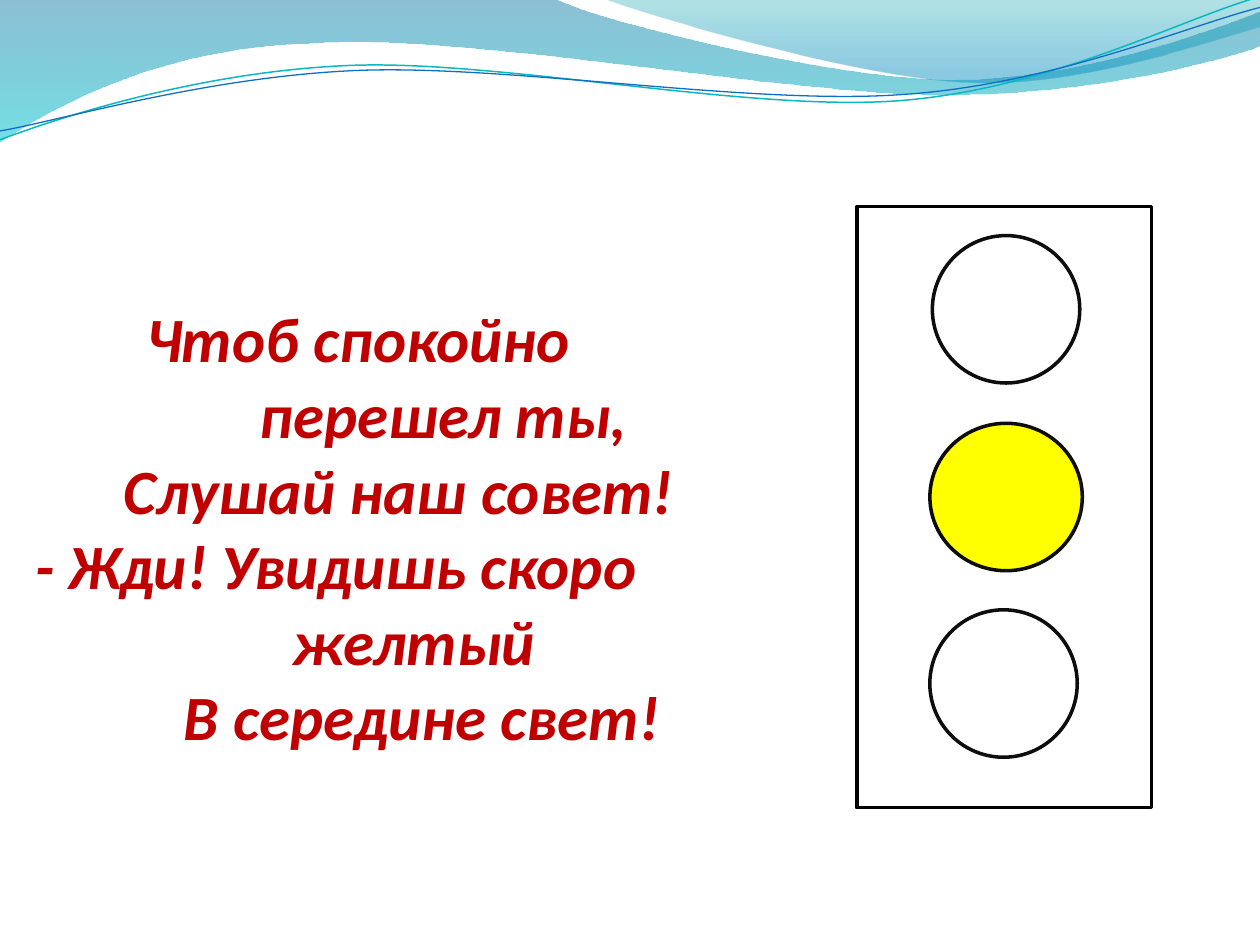
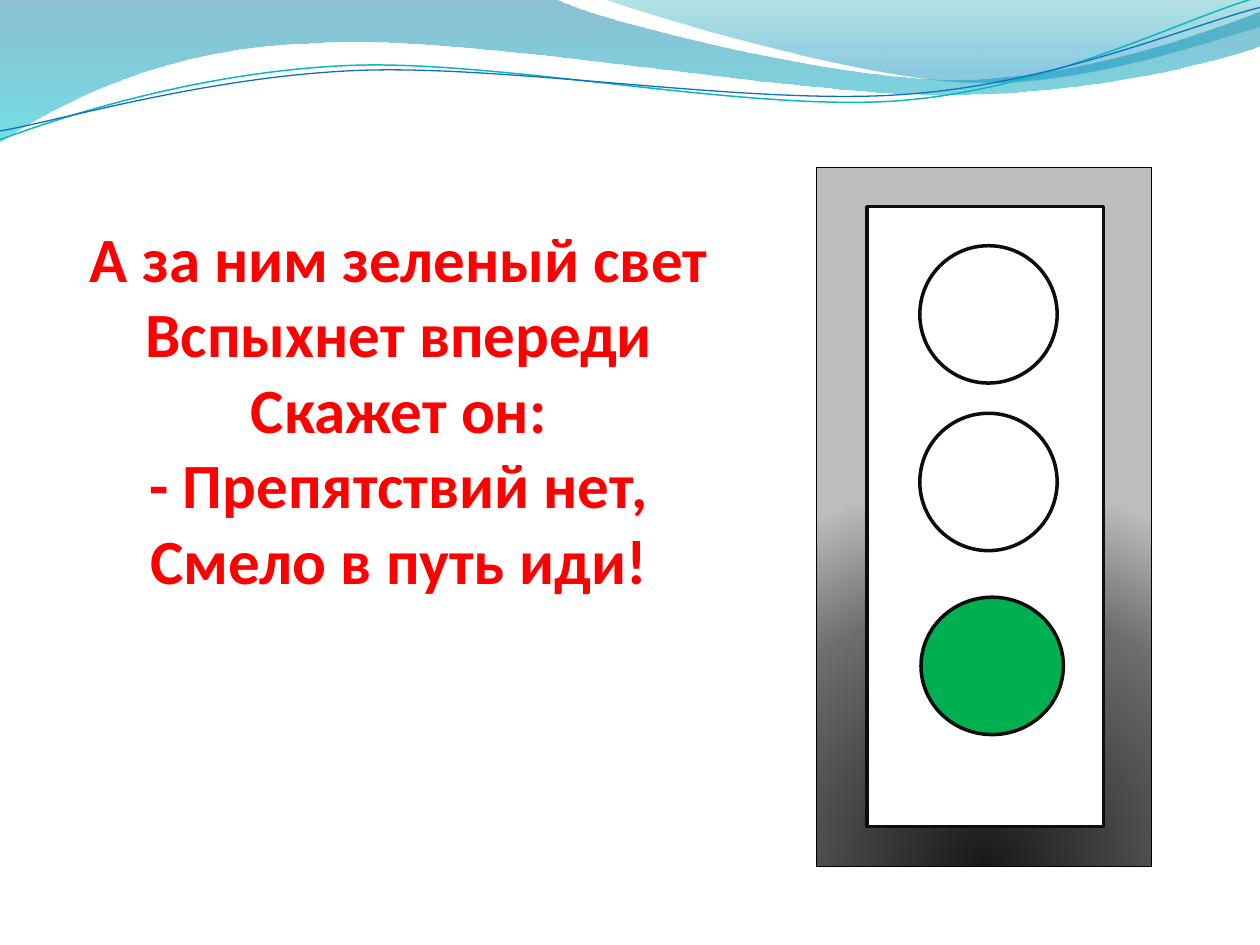
import math
from dataclasses import dataclass

from pptx import Presentation
from pptx.dml.color import RGBColor
from pptx.enum import shapes, text
from pptx.oxml import parse_xml
from pptx.oxml.ns import nsdecls, qn
from pptx.util import Inches, Pt


@dataclass(frozen=True)
class Theme:
    font: str = "Calibri"
    verse_size: float = 36
    crimson: str = "C00000"
    red: str = "FF0000"
    yellow: str = "FFFF00"
    green: str = "00B050"
    white: str = "FFFFFF"
    black: str = "000000"
    outline: str = "0D0D0D"
    outline_width: float = 2
    thin_width: float = 0.75
    wave_teal: str = "0AB8BF"
    wave_blue: str = "0F6FC6"
    broad_wave: tuple = ((0, "0074A1", 45), (100, "00C6CF", 55))
    corner_wave: tuple = ((0, "00A1A9", 30), (80, "008BBF", 45))
    metal: tuple = ((0, "191919", 100), (68, "6C6C6C", 100), (100, "BDBDBD", 100))


THEME = Theme()
DOWNWARD = '<a:lin ang="5400000" scaled="0"/>'
FROM_BELOW = ('<a:path path="circle">'
              '<a:fillToRect l="50000" t="130000" r="50000" b="-30000"/></a:path>')
CURVE_TILT = -2.7

BROAD_WAVE = [
    (0, 0), (4.4, -0.01), (4.76, 0.17, 6.64, 0.63, 7.58, 0.63),
    (8.53, 0.63, 9.58, 0.26, 10, 0.09), (10.01, 0.36),
    (9.83, 0.44, 8.7, 0.76, 7.46, 0.75), (6.22, 0.75, 3.82, 0.28, 2.57, 0.34),
    (1.29, 0.36, 0.46, 0.83, -0.01, 1.13), (0, 0)]
CORNER_WAVE = [
    (4.79, -0.01), (5.09, 0.11, 6.82, 0.62, 7.69, 0.65),
    (8.56, 0.69, 9.61, 0.32, 10, 0.21), (10, 0), (4.79, -0.01)]
TEAL_CURVE = [
    (0, 1.11), (0.48, 0.93, 1.58, 0.57, 2.77, 0.52),
    (3.95, 0.47, 5.93, 0.89, 7.13, 0.8), (8.33, 0.71, 9.38, 0.15, 9.98, -0.02)]
BLUE_CURVE = [
    (0, 1.04), (0.47, 0.96, 1.64, 0.61, 2.83, 0.56),
    (4.03, 0.51, 5.97, 0.84, 7.17, 0.75), (8.36, 0.67, 9.41, 0.21, 10, 0.06)]

WAIT_VERSE = [
    ("Чтоб спокойно", 1), ("перешел ты,", 1.9), ("Слушай наш совет!", 0.82),
    ("- Жди! Увидишь скоро", 0.12), ("желтый", 2.16), ("В середине свет!", 1.3)]
GO_VERSE = [
    ("А за ним зеленый свет\vВспыхнет впереди\vСкажет он:\v"
     "- Препятствий нет,\vСмело в путь иди!", 0)]


def rgb(color):
    return RGBColor.from_string(color)


def paint(sp, fill=None, line=None, width=THEME.outline_width):
    sp.shadow.inherit = False
    if fill:
        sp.fill.solid()
        sp.fill.fore_color.rgb = rgb(fill)
    else:
        sp.fill.background()
    if line:
        sp.line.color.rgb = rgb(line)
        sp.line.width = Pt(width)
    else:
        sp.line.fill.background()


def set_gradient(sp, stops, direction):
    gs = "".join(
        f'<a:gs pos="{pos * 1000}"><a:srgbClr val="{color}">'
        f'<a:alpha val="{alpha * 1000}"/></a:srgbClr></a:gs>'
        for pos, color, alpha in stops)
    sp.fill.background()
    spPr = sp.element.spPr
    spPr.replace(spPr.find(qn("a:noFill")), parse_xml(
        f'<a:gradFill {nsdecls("a")} rotWithShape="1">'
        f'<a:gsLst>{gs}</a:gsLst>{direction}</a:gradFill>'))


def rotate(points, degrees):
    xs, ys = zip(*points)
    cx, cy = (min(xs) + max(xs)) / 2, (min(ys) + max(ys)) / 2
    cos, sin = math.cos(math.radians(degrees)), math.sin(math.radians(degrees))
    return [(cx + (x - cx) * cos - (y - cy) * sin,
             cy + (x - cx) * sin + (y - cy) * cos) for x, y in points]


def bend(sp, outline):
    lines = iter(list(sp.element.iter(qn("a:lnTo"))))
    for segment in outline[1:]:
        first = next(lines)
        if len(segment) == 6:
            curve = parse_xml(f'<a:cubicBezTo {nsdecls("a")}/>')
            first.addprevious(curve)
            for ln in (first, next(lines), next(lines)):
                curve.append(ln[0])
                ln.getparent().remove(ln)


def add_wave(s, outline, stops=None, line=None, width=THEME.thin_width, tilt=0):
    points = [seg[i:i + 2] for seg in outline for i in range(0, len(seg), 2)]
    points = [(Inches(x), Inches(y)) for x, y in rotate(points, -tilt)]
    builder = s.shapes.build_freeform(*points[0])
    builder.add_line_segments(points[1:], close=stops is not None)
    sp = builder.convert_to_shape()
    bend(sp, outline)
    sp.rotation = tilt
    paint(sp, line=line, width=width)
    if stops:
        set_gradient(sp, stops, DOWNWARD)
    return sp


def add_waves_to_layout(s):
    waves = [
        add_wave(s, BROAD_WAVE, stops=THEME.broad_wave),
        add_wave(s, CORNER_WAVE, stops=THEME.corner_wave),
        add_wave(s, TEAL_CURVE, line=THEME.wave_teal, width=0.85, tilt=CURVE_TILT),
        add_wave(s, BLUE_CURVE, line=THEME.wave_blue, tilt=CURVE_TILT)]
    tree = s.slide_layout.shapes.element
    for number, sp in enumerate(waves, start=101):
        sp.element.nvSpPr.cNvPr.set("id", str(number))
        tree.append(sp.element)


def write(p, content, size=THEME.verse_size, color=THEME.red, italic=False,
          align=text.PP_ALIGN.CENTER, indent=0):
    p.text = content
    p.alignment = align
    if indent:
        p._p.get_or_add_pPr().set("marL", str(Inches(indent)))
    for r in p.runs:
        r.font.name = THEME.font
        r.font.size = Pt(size)
        r.font.bold = True
        r.font.italic = italic
        r.font.color.rgb = rgb(color)


def add_verse(s, lines, box, bottom_inset, **style):
    title = s.shapes.title
    title.left, title.top, title.width, title.height = map(Inches, box)
    tf = title.text_frame
    tf.word_wrap = True
    tf.auto_size = text.MSO_AUTO_SIZE.NONE
    tf.vertical_anchor = text.MSO_ANCHOR.BOTTOM
    tf.margin_left = tf.margin_right = 0
    tf.margin_top, tf.margin_bottom = Inches(0.05), Inches(bottom_inset)
    for i, (content, indent) in enumerate(lines):
        p = tf.add_paragraph() if i else tf.paragraphs[0]
        write(p, content, indent=indent, **style)


def add_box(s, kind, box, **style):
    sp = s.shapes.add_shape(kind, *map(Inches, box))
    paint(sp, **style)
    return sp


def add_traffic_light(s, panel, lamps, border):
    add_box(s, shapes.MSO_SHAPE.RECTANGLE, panel, fill=THEME.white, line=border)
    for box, color in lamps:
        add_box(s, shapes.MSO_SHAPE.OVAL, box, fill=color, line=THEME.outline)


def add_metal_case(s, box):
    case = add_box(s, shapes.MSO_SHAPE.RECTANGLE, box,
                   line=THEME.black, width=THEME.thin_width)
    set_gradient(case, THEME.metal, FROM_BELOW)


def add_wait_slide(s):
    add_verse(s, WAIT_VERSE, (0.16, 1.33, 5.47, 5.23), 0.58,
              color=THEME.crimson, italic=True, align=text.PP_ALIGN.LEFT)
    add_traffic_light(s, (6.8, 1.64, 2.34, 4.77), [
        ((7.4, 1.87, 1.17, 1.17), THEME.white),
        ((7.38, 3.36, 1.21, 1.17), THEME.yellow),
        ((7.38, 4.84, 1.17, 1.17), THEME.white)], THEME.black)


def add_go_slide(s):
    add_verse(s, GO_VERSE, (0.39, -0.39, 5.55, 8.13), 3)
    add_metal_case(s, (6.48, 1.33, 2.66, 5.55))
    add_traffic_light(s, (6.88, 1.64, 1.88, 4.92), [
        ((7.3, 1.95, 1.09, 1.09), THEME.white),
        ((7.3, 3.28, 1.09, 1.09), THEME.white),
        ((7.31, 4.74, 1.13, 1.09), THEME.green)], THEME.outline)


def main():
    prs = Presentation()
    prs.slide_width, prs.slide_height = Inches(10), Inches(7.5)
    layout = prs.slide_layouts.get_by_name("Title Only")
    wait, go = (prs.slides.add_slide(layout) for _ in range(2))
    add_waves_to_layout(wait)
    add_wait_slide(wait)
    add_go_slide(go)
    prs.save("out.pptx")


if __name__ == "__main__":
    main()
